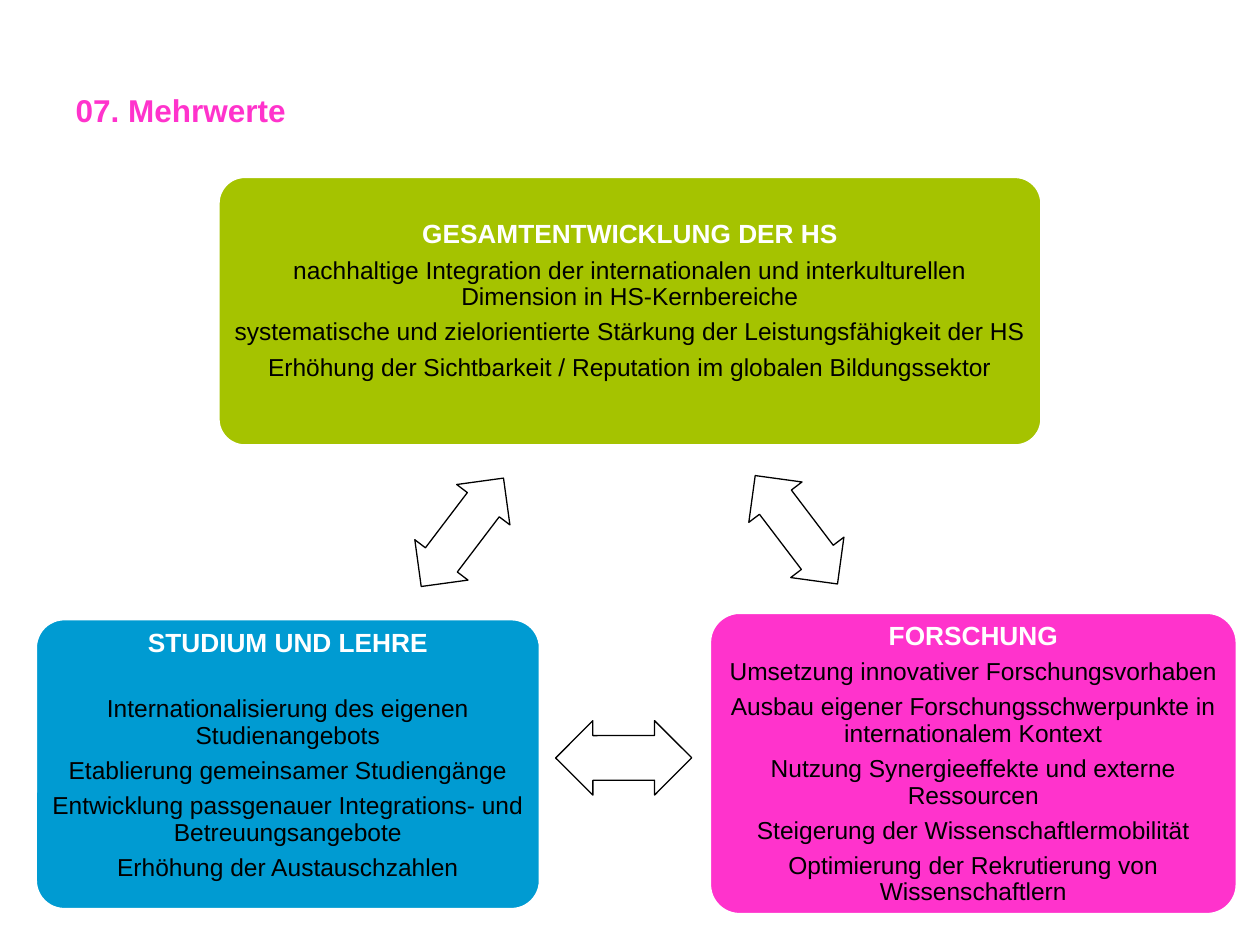
import pptx
import pptx.util
import pptx.dml.color
import pptx.enum.shapes
import pptx.enum.text

Inches, Pt = pptx.util.Inches, pptx.util.Pt
SHAPE = pptx.enum.shapes.MSO_SHAPE
ANCHOR = pptx.enum.text.MSO_ANCHOR
ALIGN = pptx.enum.text.PP_ALIGN

COLORS = {"green": "A5C300", "pink": "FF33CC", "blue": "009BD2",
          "white": "FFFFFF", "black": "000000"}


def rgb(name):
    return pptx.dml.color.RGBColor.from_string(COLORS[name])


def add_run(p, text, size, color, bold):
    r = p.add_run()
    r.text = text
    r.font.name = "Arial"
    r.font.size = Pt(size)
    r.font.bold = bold
    r.font.color.rgb = rgb(color)


prs = pptx.Presentation()
prs.slide_width, prs.slide_height = Inches(10), Inches(7.5)
s = prs.slides.add_slide(prs.slide_layouts[5])

title = s.shapes.title
title.left, title.top = Inches(0.5), Inches(0.67)
title.width, title.height = Inches(5.42), Inches(1.25)
tf = title.text_frame
tf.vertical_anchor = ANCHOR.TOP
p = tf.paragraphs[0]
p.alignment = ALIGN.LEFT
add_run(p, "07. Mehrwerte", 18, "pink", True)

# position and size, fill, top inset, space after heading, heading, points
boxes = [
    ((1.73, 1.4, 6.54, 2.14), "green", 0.29, 5, "GESAMTENTWICKLUNG DER HS", [
        "nachhaltige Integration der internationalen und interkulturellen "
        "Dimension in HS-Kernbereiche",
        "systematische und zielorientierte Stärkung der Leistungsfähigkeit der HS",
        "Erhöhung der Sichtbarkeit / Reputation im globalen Bildungssektor"]),
    ((5.63, 4.86, 4.19, 2.4), "pink", 0.01, 5, "FORSCHUNG", [
        "Umsetzung innovativer Forschungsvorhaben",
        "Ausbau eigener Forschungsschwerpunkte in internationalem Kontext",
        "Nutzung Synergieeffekte und externe Ressourcen",
        "Steigerung der Wissenschaftlermobilität",
        "Optimierung der Rekrutierung von Wissenschaftlern"]),
    ((0.28, 4.91, 4.01, 2.31), "blue", 0.02, 22, "STUDIUM UND LEHRE", [
        "Internationalisierung des eigenen Studienangebots",
        "Etablierung gemeinsamer Studiengänge",
        "Entwicklung passgenauer Integrations- und Betreuungsangebote",
        "Erhöhung der Austauschzahlen"]),
]
for place, fill, inset, gap, heading, points in boxes:
    sp = s.shapes.add_shape(SHAPE.ROUNDED_RECTANGLE, *map(Inches, place))
    sp.adjustments[0] = 0.1
    sp.shadow.inherit = False
    sp.fill.solid()
    sp.fill.fore_color.rgb = rgb(fill)
    sp.line.color.rgb = rgb("white")
    sp.line.width = Pt(2)
    tf = sp.text_frame
    tf.word_wrap = True
    tf.vertical_anchor = ANCHOR.TOP
    tf.margin_left = tf.margin_right = Inches(0.06)
    tf.margin_top, tf.margin_bottom = Inches(inset), Inches(0)
    for i, text in enumerate([heading] + points):
        p = tf.add_paragraph() if i else tf.paragraphs[0]
        p.alignment = ALIGN.CENTER
        p.line_spacing = 0.9
        p.space_after = Pt(5 if i else gap)
        if i:
            add_run(p, text, 14, "black", False)
        else:
            add_run(p, text, 15, "white", True)

# left, top, height, rotation
for left, top, height, angle in [(5.78, 3.94, 0.53, 52.8),
                                 (4.41, 5.72, 0.59, 179.9),
                                 (3.13, 3.96, 0.53, 307.2)]:
    sp = s.shapes.add_shape(SHAPE.LEFT_RIGHT_ARROW, Inches(left), Inches(top),
                            Inches(1.08), Inches(height))
    sp.adjustments[0], sp.adjustments[1] = 0.6, 0.5
    sp.rotation = angle
    sp.shadow.inherit = False
    sp.fill.solid()
    sp.fill.fore_color.rgb = rgb("white")
    sp.line.color.rgb = rgb("black")
    sp.line.width = Pt(0.75)

prs.save("out.pptx")
